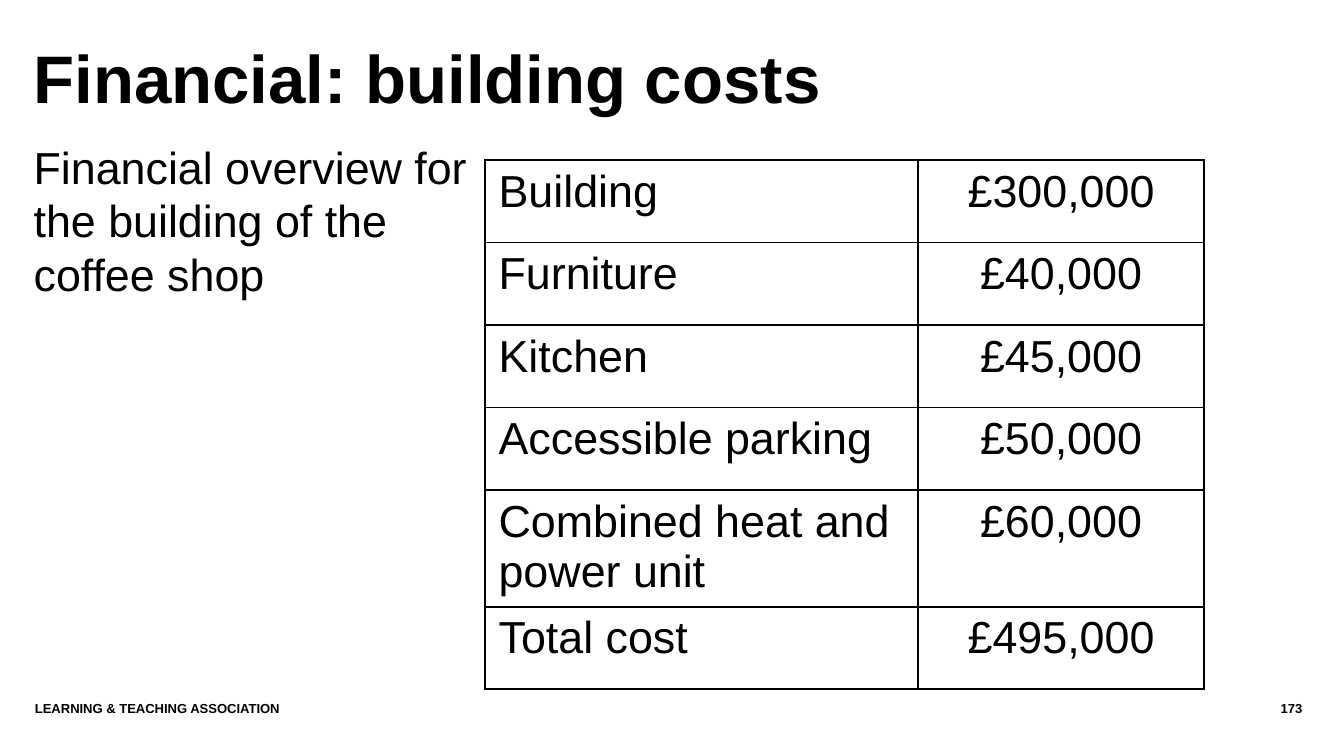
from lxml import etree
from pptx import Presentation, util as u
from pptx.dml.color import RGBColor
from pptx.enum import text
from pptx.oxml import ns

WIDTH = u.Inches(10)
HEIGHT = WIDTH * 9 // 16
MARGIN = 0.25
BLACK = "000000"
COLUMN_WIDTHS = (3.22, 2.13)
ROW_POINTS, TALL_ROW_POINTS = 44.2, 62.6
COSTS = (
    ("Building", "£300,000", ROW_POINTS),
    ("Furniture", "£40,000", ROW_POINTS),
    ("Kitchen", "£45,000", ROW_POINTS),
    ("Accessible parking", "£50,000", ROW_POINTS),
    ("Combined heat and power unit", "£60,000", TALL_ROW_POINTS),
    ("Total cost", "£495,000", ROW_POINTS),
)


def color(value):
    """Turn a hex string into a colour."""
    return RGBColor.from_string(value)


def place(shape, left, top, width, height):
    """Set a shape's position and size in inches."""
    shape.left, shape.top = u.Inches(left), u.Inches(top)
    shape.width, shape.height = u.Inches(width), u.Inches(height)


def format_paragraph(paragraph, size, bold=False, align=text.PP_ALIGN.LEFT):
    """Apply the slide's font and an alignment to a paragraph."""
    paragraph.alignment = align
    font = paragraph.font
    font.name, font.size, font.bold = "Arial", u.Pt(size), bold
    font.color.rgb = color(BLACK)


def fill_frame(shape, words, size, bold=False, align=text.PP_ALIGN.LEFT):
    """Write one paragraph into a top-anchored frame without insets."""
    frame = shape.text_frame
    frame.text = words
    frame.word_wrap = True
    frame.auto_size = text.MSO_AUTO_SIZE.NONE
    frame.vertical_anchor = text.MSO_ANCHOR.TOP
    frame.margin_left = frame.margin_right = 0
    frame.margin_top = frame.margin_bottom = 0
    paragraph = frame.paragraphs[0]
    paragraph.space_before = u.Pt(0)
    format_paragraph(paragraph, size, bold, align)
    return paragraph


def add_title(slide, words):
    """Fill the title placeholder."""
    place(slide.shapes.title, MARGIN, 0.27, 9.23, 0.76)
    paragraph = fill_frame(slide.shapes.title, words, 36, bold=True)
    paragraph.space_before = u.Pt(3.5)


def add_overview(slide, words):
    """Fill the body placeholder with unbulleted text."""
    body = slide.placeholders[1]
    place(body, MARGIN, 1.04, 3.49, 3.67)
    paragraph = fill_frame(body, words, 24)
    paragraph.line_spacing = u.Pt(28.7)
    properties = paragraph._p.get_or_add_pPr()
    properties.set("marL", "0")
    properties.set("indent", "0")
    etree.SubElement(properties, ns.qn("a:buNone"))
    properties.append(properties.find(ns.qn("a:defRPr")))


def add_footer(slide, words, left, width, align):
    """Add a small bold line at the foot of the slide."""
    box = slide.shapes.add_textbox(0, 0, 0, 0)
    place(box, left, 5.21, width, 0.3)
    fill_frame(box, words, 7, bold=True, align=align)


def add_borders(cell):
    """Draw thin solid borders on all sides of a cell."""
    properties = cell._tc.get_or_add_tcPr()
    for index, side in enumerate(("lnL", "lnR", "lnT", "lnB")):
        line = etree.Element(ns.qn(f"a:{side}"), w=str(u.Pt(1)))
        fill = etree.SubElement(line, ns.qn("a:solidFill"))
        etree.SubElement(fill, ns.qn("a:srgbClr"), val=BLACK)
        properties.insert(index, line)


def add_cost_table(slide):
    """Add the table of cost items and amounts."""
    total_points = sum(points for _, _, points in COSTS)
    table = slide.shapes.add_table(
        len(COSTS), len(COLUMN_WIDTHS), u.Inches(3.61), u.Inches(1.19),
        u.Inches(sum(COLUMN_WIDTHS)), u.Pt(total_points)).table
    table.first_row = table.horz_banding = False
    for column, width in zip(table.columns, COLUMN_WIDTHS):
        column.width = u.Inches(width)
    alignments = (text.PP_ALIGN.LEFT, text.PP_ALIGN.CENTER)
    for row, (item, amount, points) in zip(table.rows, COSTS):
        row.height = u.Pt(points)
        for cell, words, align in zip(row.cells, (item, amount), alignments):
            cell.text = words
            cell.fill.background()
            format_paragraph(cell.text_frame.paragraphs[0], 24, align=align)
            add_borders(cell)


def main():
    """Build and save the building costs slide."""
    presentation = Presentation()
    presentation.slide_width = WIDTH
    presentation.slide_height = HEIGHT
    slide = presentation.slides.add_slide(presentation.slide_layouts[1])
    add_title(slide, "Financial: building costs")
    add_overview(slide, "Financial overview for the building of the coffee shop")
    add_footer(slide, "LEARNING & TEACHING ASSOCIATION", 0.26, 8.41,
               text.PP_ALIGN.LEFT)
    add_footer(slide, "173", 8.7, 0.99, text.PP_ALIGN.RIGHT)
    add_cost_table(slide)
    presentation.save("out.pptx")


if __name__ == "__main__":
    main()
